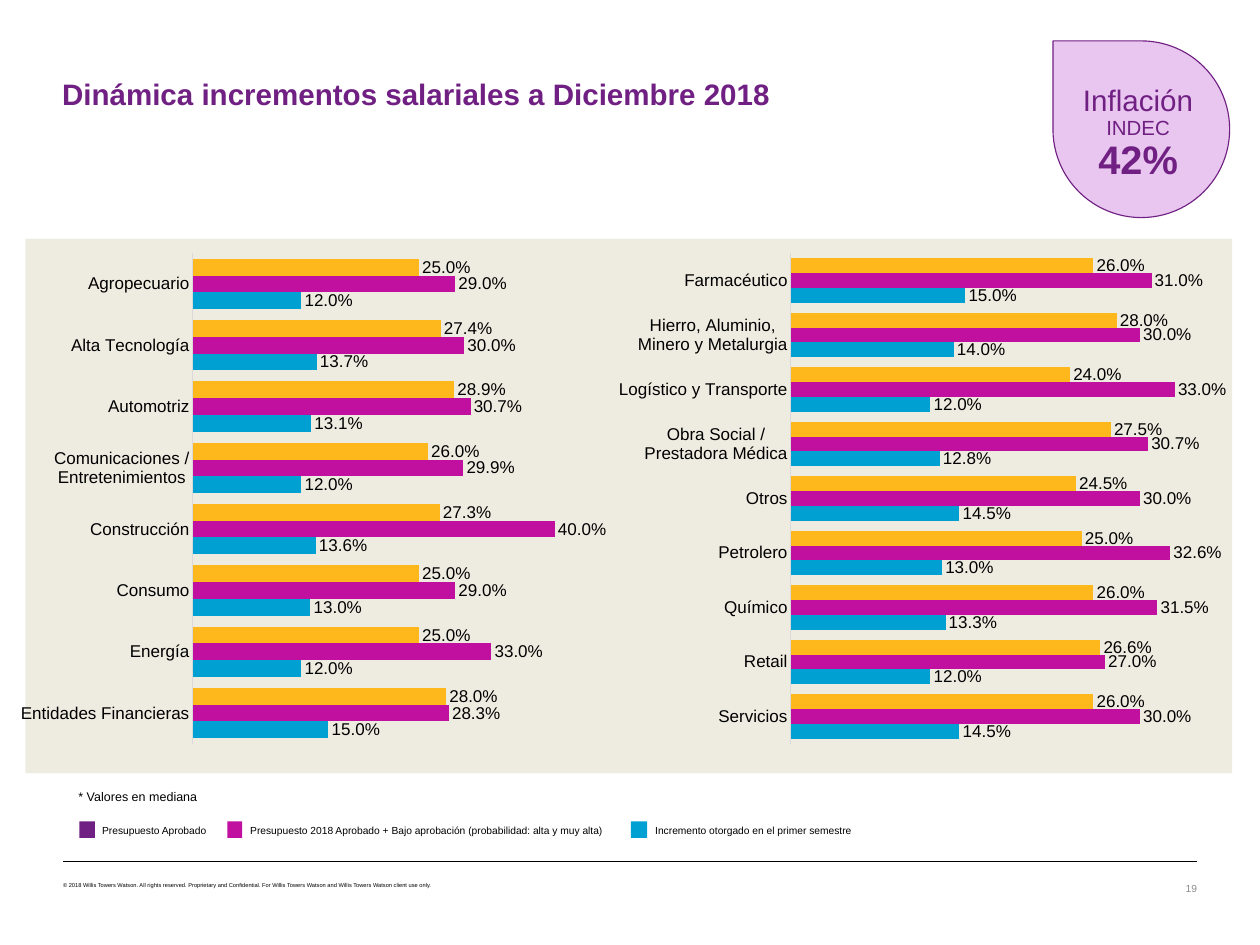
import dataclasses

import lxml.etree
import pptx
import pptx.chart.data
import pptx.dml.color
import pptx.enum.chart
import pptx.enum.shapes
import pptx.enum.text
import pptx.oxml
import pptx.oxml.ns
import pptx.util

PX = 9144
ALIGN = pptx.enum.text.PP_ALIGN
SHAPES = pptx.enum.shapes.MSO_SHAPE


@dataclasses.dataclass(frozen=True)
class Theme:
    """Colours, font and type sizes of the slide."""
    font: str = "Arial"
    purple: str = "702082"
    lilac: str = "E8C6F0"
    amber: str = "FFB81C"
    magenta: str = "C110A0"
    blue: str = "00A0D2"
    sand: str = "EEECE1"
    axis: str = "D9D9D9"
    grey: str = "8C8C8C"
    black: str = "000000"
    title: int = 26
    badge_note: int = 18
    badge_figure: int = 35
    chart: int = 15
    note: int = 11
    small: int = 9
    copyright: int = 5


THEME = Theme()
SERIES = [
    ("Presupuesto Aprobado", THEME.amber),
    ("Presupuesto 2018 Aprobado + Bajo aprobación", THEME.magenta),
    ("Incremento otorgado en el primer semestre", THEME.blue),
]
SECTORS_LEFT = [
    ("Agropecuario", 0.25, 0.29, 0.12),
    ("Alta Tecnología", 0.274, 0.3, 0.137),
    ("Automotriz", 0.289, 0.307, 0.131),
    ("Comunicaciones / Entretenimientos", 0.26, 0.299, 0.12),
    ("Construcción", 0.273, 0.4, 0.136),
    ("Consumo", 0.25, 0.29, 0.13),
    ("Energía", 0.25, 0.33, 0.12),
    ("Entidades Financieras", 0.28, 0.283, 0.15),
]
SECTORS_RIGHT = [
    ("Farmacéutico", 0.26, 0.31, 0.15),
    ("Hierro, Aluminio, Minero y Metalurgia", 0.28, 0.3, 0.14),
    ("Logístico y Transporte", 0.24, 0.33, 0.12),
    ("Obra Social / Prestadora Médica", 0.275, 0.307, 0.128),
    ("Otros", 0.245, 0.3, 0.145),
    ("Petrolero", 0.25, 0.326, 0.13),
    ("Químico", 0.26, 0.315, 0.133),
    ("Retail", 0.266, 0.27, 0.12),
    ("Servicios", 0.26, 0.3, 0.145),
]
LEGEND = [
    (0, 19, 18, "Presupuesto Aprobado", 149, THEME.purple),
    (181, 18, 199, "Presupuesto 2018 Aprobado + Bajo aprobación (probabilidad: alta y muy alta)",
     532, THEME.magenta),
    (674, 20, 694, "Incremento otorgado en el primer semestre", 262, THEME.blue),
]


def emu(box):
    """Turn px lengths into EMU."""
    return [pptx.util.Emu(length * PX) for length in box]


def rgb(colour):
    """Read a hex colour."""
    return pptx.dml.color.RGBColor.from_string(colour)


def style(font, size, colour, bold=False):
    """Set the theme font with a size and colour."""
    font.name = THEME.font
    font.size = pptx.util.Pt(size)
    font.color.rgb = rgb(colour)
    font.bold = bold


def add_block(slide, box, fill, outline=None, kind=SHAPES.RECTANGLE):
    """Add a flat filled shape."""
    block = slide.shapes.add_shape(kind, *emu(box))
    block.shadow.inherit = False
    block.fill.solid()
    block.fill.fore_color.rgb = rgb(fill)
    if outline:
        block.line.color.rgb = rgb(outline)
        block.line.width = pptx.util.Pt(1)
    else:
        block.line.fill.background()
    return block


def add_text(slide, box, lines, align=ALIGN.LEFT, inset=(10, 5), spacing=None, wrap=True,
             anchor=pptx.enum.text.MSO_ANCHOR.TOP):
    """Add a text box with one (text, size, colour, bold) tuple per paragraph."""
    frame = slide.shapes.add_textbox(*emu(box)).text_frame
    frame.word_wrap = wrap
    frame.vertical_anchor = anchor
    frame.margin_left = frame.margin_right = pptx.util.Emu(inset[0] * PX)
    frame.margin_top = frame.margin_bottom = pptx.util.Emu(inset[1] * PX)
    for index, (text, *look) in enumerate(lines):
        paragraph = frame.add_paragraph() if index else frame.paragraphs[0]
        paragraph.text = text
        paragraph.alignment = align
        paragraph.line_spacing = spacing
        style(paragraph.font, *look)


def add_badge(slide, box):
    """Draw the inflation teardrop with its figure."""
    left, top, width, height = box
    drop = add_block(slide, box, THEME.lilac, THEME.purple, SHAPES.TEAR)
    drop._element.spPr.find(pptx.oxml.ns.qn("a:xfrm")).set("flipH", "1")
    add_text(slide, (left + 23, top + 50, width - 54, height - 85), [
        ("Inflación", THEME.title, THEME.purple),
        ("INDEC", THEME.badge_note, THEME.purple),
        ("42%", THEME.badge_figure, THEME.purple, True),
    ], ALIGN.CENTER, spacing=0.9)


def place_plot(chart, **place):
    """Fix the inner plot area as fractions of the chart."""
    area = chart._chartSpace.chart.plotArea
    qn = pptx.oxml.ns.qn
    for old in area.findall(qn("c:layout")):
        area.remove(old)
    layout = lxml.etree.Element(qn("c:layout"))
    manual = lxml.etree.SubElement(layout, qn("c:manualLayout"))
    settings = {"layoutTarget": "inner", "xMode": "edge", "yMode": "edge", **place}
    for tag, value in settings.items():
        lxml.etree.SubElement(manual, qn(f"c:{tag}")).set("val", str(value))
    area.insert(0, layout)


def add_sector_chart(slide, box, sectors, maximum):
    """Draw the clustered bars of one list of sectors."""
    names, *columns = zip(*sectors)
    figures = pptx.chart.data.CategoryChartData(number_format="0.0%")
    figures.categories = names
    for (name, _), values in zip(SERIES, columns):
        figures.add_series(name, values)
    chart = slide.shapes.add_chart(
        pptx.enum.chart.XL_CHART_TYPE.BAR_CLUSTERED, *emu(box), figures).chart
    chart.has_title = chart.has_legend = False
    style(chart.font, THEME.chart, THEME.black)
    place_plot(chart, x=0.287, y=0.027, w=0.663, h=0.918)

    sector_axis = chart.category_axis
    sector_axis.reverse_order = True
    sector_axis.major_tick_mark = pptx.enum.chart.XL_TICK_MARK.NONE
    sector_axis.format.line.color.rgb = rgb(THEME.axis)
    sector_axis.format.line.width = pptx.util.Pt(0.75)
    style(sector_axis.tick_labels.font, THEME.chart, THEME.black)
    rate_axis = chart.value_axis
    rate_axis.minimum_scale, rate_axis.maximum_scale = 0, maximum
    rate_axis.has_major_gridlines = False
    rate_axis.visible = False

    bars = chart.plots[0]
    bars.gap_width, bars.overlap = 67, 0
    bars.vary_by_categories = False
    for series, (_, colour) in zip(bars.series, SERIES):
        series.format.fill.solid()
        series.format.fill.fore_color.rgb = rgb(colour)
        labels = series.data_labels
        labels.show_value = True
        labels.number_format, labels.number_format_is_linked = "0.0%", False
        labels.position = pptx.enum.chart.XL_LABEL_POSITION.OUTSIDE_END
        style(labels.font, THEME.chart, THEME.black)


def add_panel(slide, box):
    """Place both sector charts on the sand panel."""
    left, top, width, height = box
    add_block(slide, box, THEME.sand)
    add_sector_chart(slide, (left - 11, top, 751, height), SECTORS_LEFT, 0.45)
    add_sector_chart(slide, (left + 720, top, 751, height), SECTORS_RIGHT, 0.35)


def add_legend(slide, box):
    """Add the median note and the colour key."""
    left, top, width, height = box
    add_text(slide, (left - 11, top, 309, 29),
             [("* Valores en mediana", THEME.note, THEME.black)])
    for swatch, swatch_width, label, text, label_width, colour in LEGEND:
        add_block(slide, (left + swatch, top + height - 20, swatch_width, 20), colour)
        add_text(slide, (left + label, top + height - 21, label_width, 25),
                 [(text, THEME.small, THEME.black)], wrap=False)


def add_footer(slide, box):
    """Draw the rule, the copyright line and the page number."""
    left, top, width, height = box
    begin_x, end_x, y = emu((left, left + width, top))
    rule = slide.shapes.add_connector(
        pptx.enum.shapes.MSO_CONNECTOR.STRAIGHT, begin_x, y, end_x, y)
    rule.line.color.rgb = rgb(THEME.black)
    rule.line.width = pptx.util.Pt(0.25)
    lxml.etree.SubElement(rule._element.spPr, pptx.oxml.ns.qn("a:effectLst"))
    add_text(slide, (left, top + 26, 889, 8), [(
        "© 2018 Willis Towers Watson. All rights reserved. Proprietary and Confidential. "
        "For Willis Towers Watson and Willis Towers Watson client use only.",
        THEME.copyright, THEME.black)], inset=(0, 0))
    add_text(slide, (left + width - 64, top + 26, 64, 15),
             [("19", THEME.small, THEME.grey)], ALIGN.RIGHT, (0, 0))


def main():
    """Build and save the salary slide."""
    deck = pptx.Presentation()
    deck.slide_width, deck.slide_height = emu((1540, 1155))
    slide = deck.slides.add_slide(deck.slide_layouts[6])
    add_text(slide, (66, 84, 915, 62), [
        ("Dinámica incrementos salariales a Diciembre 2018", THEME.title, THEME.purple, True),
    ], anchor=pptx.enum.text.MSO_ANCHOR.MIDDLE)
    add_panel(slide, (31, 292, 1475, 653))
    add_legend(slide, (97, 960, 956, 64))
    add_footer(slide, (77, 1052, 1386, 41))
    add_badge(slide, (1287, 50, 216, 216))
    deck.save("out.pptx")


if __name__ == "__main__":
    main()
